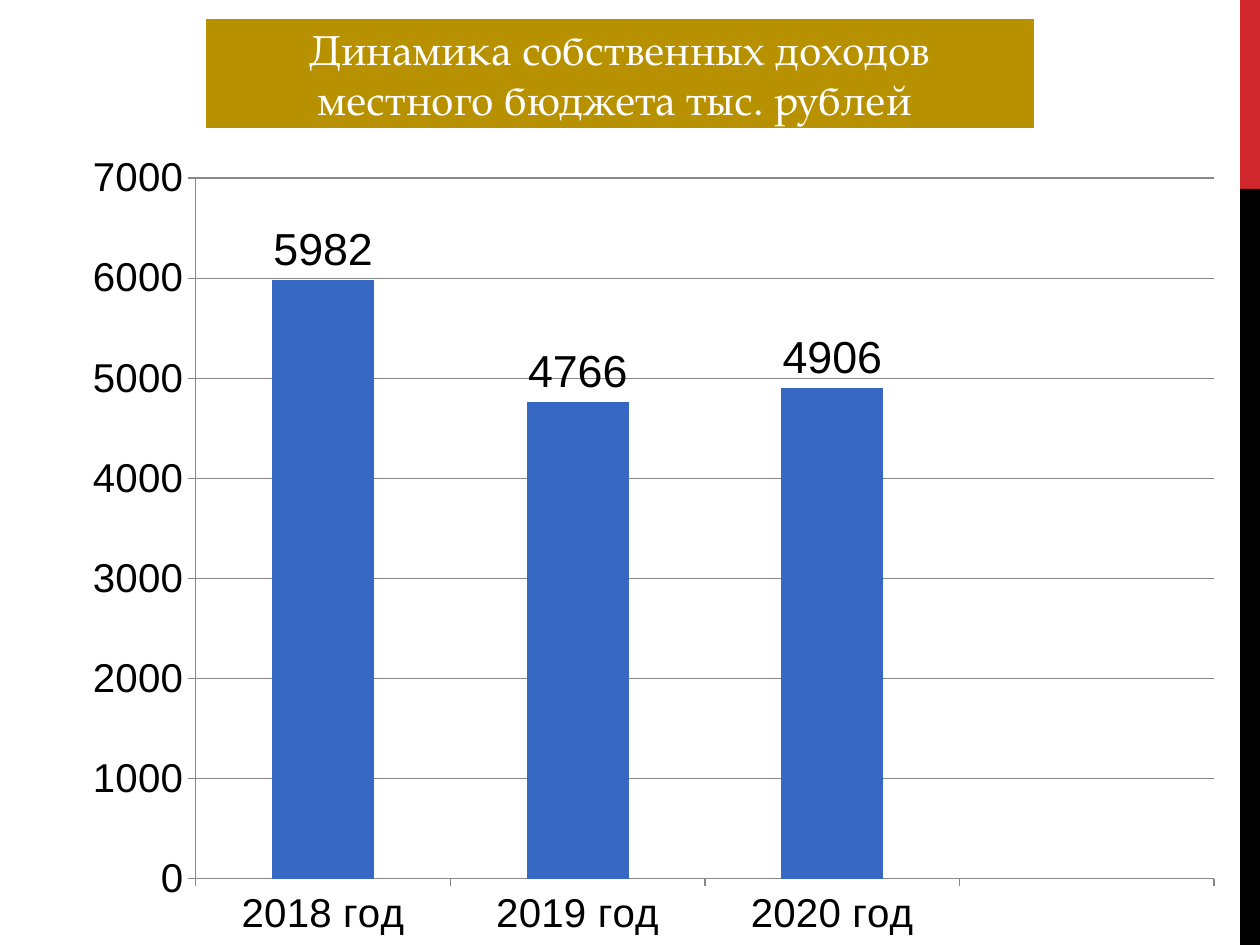
from lxml.etree import SubElement
from pptx import Presentation
from pptx.chart.data import CategoryChartData
from pptx.dml.color import RGBColor
from pptx.enum.chart import XL_CHART_TYPE, XL_LABEL_POSITION, XL_TICK_MARK
from pptx.enum.shapes import MSO_SHAPE
from pptx.enum.text import MSO_ANCHOR, MSO_AUTO_SIZE, PP_ALIGN
from pptx.oxml.ns import qn
from pptx.util import Pt

COLORS = {"red": "D1282E", "black": "000000", "white": "FFFFFF",
          "gold": "B89101", "blue": "3668C4", "grid": "878787"}
TITLE = "Динамика собственных доходов местного бюджета тыс. рублей "
YEARS = ["2018 год", "2019 год", "2020 год", ""]
INCOME = [5982, 4766, 4906, None]


def color(name):
    return RGBColor.from_string(COLORS[name])


def paint(fill, name):
    fill.solid()
    fill.fore_color.rgb = color(name)


def add_side_band(slide, top, height, name):
    band = slide.shapes.add_shape(MSO_SHAPE.RECTANGLE, Pt(708.6), Pt(top), Pt(11.4), Pt(height))
    band.shadow.inherit = False
    paint(band.fill, name)
    band.line.fill.background()


def format_title(title):
    title.left, title.top, title.width, title.height = Pt(116), Pt(9.2), Pt(476.5), Pt(65.5)
    paint(title.fill, "gold")
    title.line.color.rgb = color("white")
    title.line.width = Pt(3.25)
    frame = title.text_frame
    frame.text = TITLE
    frame.word_wrap = True
    frame.auto_size = MSO_AUTO_SIZE.SHAPE_TO_FIT_TEXT
    frame.vertical_anchor = MSO_ANCHOR.MIDDLE
    heading = frame.paragraphs[0]
    heading.alignment = PP_ALIGN.CENTER
    heading.font.name = "TeX Gyre Pagella"
    heading.font.size = Pt(24)
    heading.font.color.rgb = color("white")


def set_font(font, size):
    font.name = "Arial"
    font.size = Pt(size)
    font.bold = False
    font.color.rgb = color("black")


def place_plot(chart, x, y, w, h):
    plot_area = chart._chartSpace.chart.plotArea
    layout = plot_area.find(qn("c:layout"))
    if layout is None:
        layout = SubElement(plot_area, qn("c:layout"))
        plot_area.insert(0, layout)
    manual = SubElement(layout, qn("c:manualLayout"))
    settings = {"layoutTarget": "inner", "xMode": "edge", "yMode": "edge",
                "x": x, "y": y, "w": w, "h": h}
    for tag, value in settings.items():
        SubElement(manual, qn(f"c:{tag}")).set("val", str(value))


def add_income_chart(slide):
    income_data = CategoryChartData()
    income_data.categories = YEARS
    income_data.add_series("Series 1", INCOME)
    chart = slide.shapes.add_chart(XL_CHART_TYPE.COLUMN_CLUSTERED, Pt(22.3), Pt(78.5),
                                   Pt(679), Pt(476), income_data).chart
    chart.has_legend = False
    chart.has_title = False
    set_font(chart.font, 23)
    place_plot(chart, 0.132, 0.049, 0.857, 0.841)

    # Axes and gridlines
    for axis in (chart.category_axis, chart.value_axis):
        axis.major_tick_mark = XL_TICK_MARK.OUTSIDE
        axis.minor_tick_mark = XL_TICK_MARK.NONE
        axis.format.line.color.rgb = color("grid")
    scale = chart.value_axis
    scale.minimum_scale, scale.maximum_scale, scale.major_unit = 0, 7000, 1000
    scale.has_major_gridlines = True
    scale.major_gridlines.format.line.color.rgb = color("grid")

    # Columns and their values
    plot = chart.plots[0]
    plot.gap_width = 150
    plot.vary_by_categories = False
    paint(plot.series[0].format.fill, "blue")
    labels = plot.series[0].data_labels
    labels.show_value = True
    labels.position = XL_LABEL_POSITION.OUTSIDE_END
    set_font(labels.font, 25.6)


def main():
    deck = Presentation()
    deck.slide_width, deck.slide_height = Pt(720), Pt(540)
    slide = deck.slides.add_slide(deck.slide_layouts[5])
    add_side_band(slide, 0, 108, "red")
    add_side_band(slide, 108, 432, "black")
    format_title(slide.shapes.title)
    add_income_chart(slide)
    deck.save("out.pptx")


if __name__ == "__main__":
    main()
